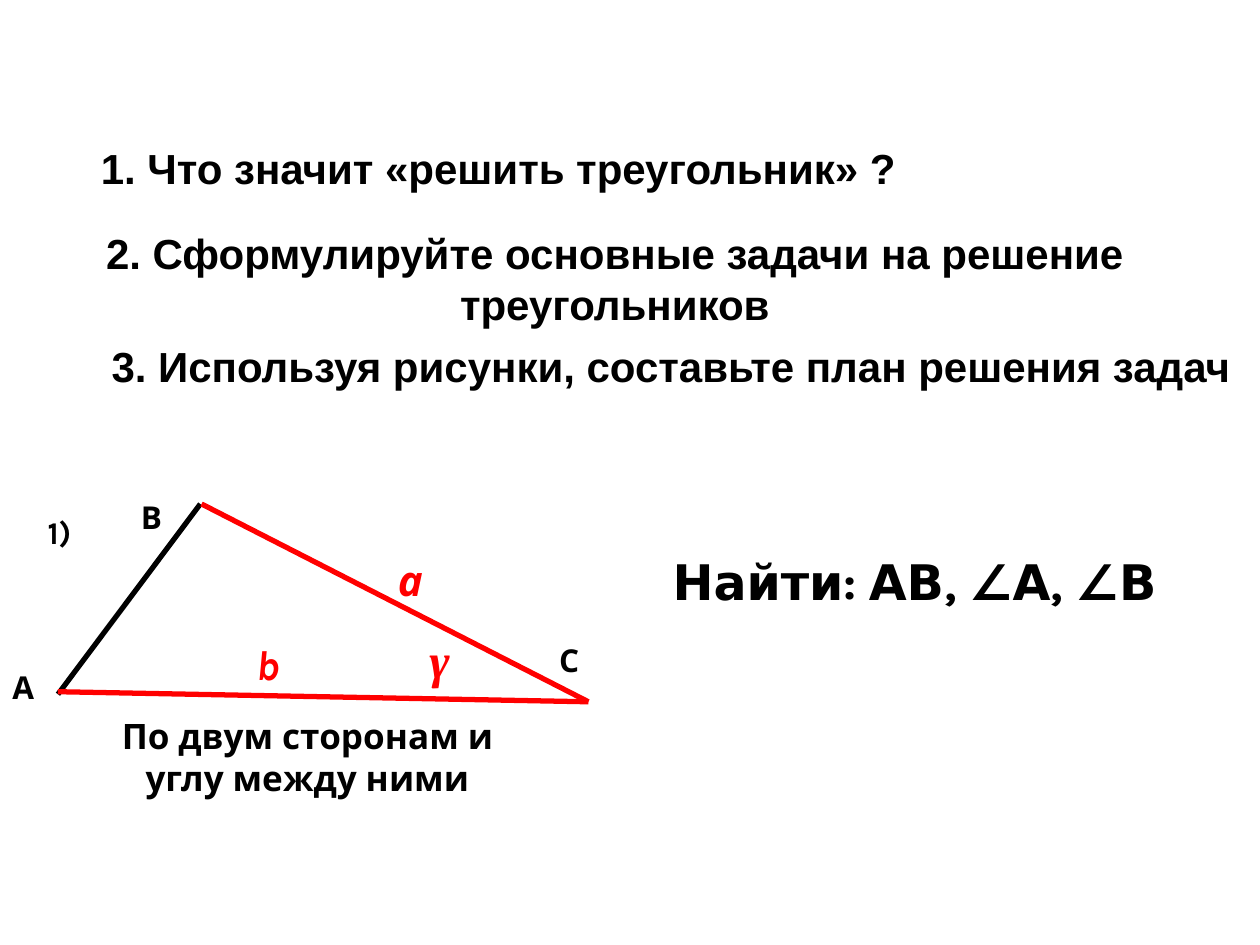
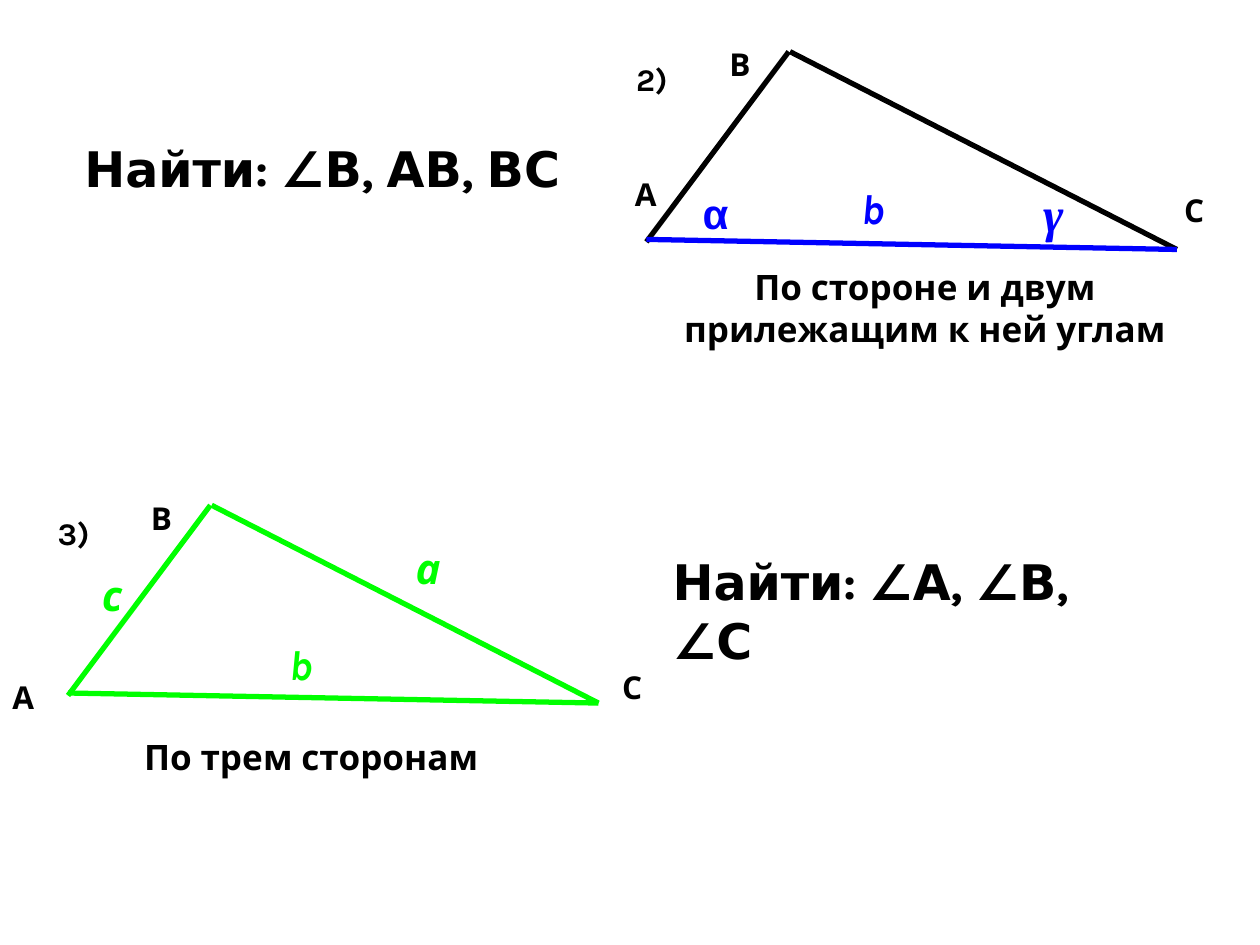
import pptx
import pptx.util
import pptx.dml.color
import pptx.enum.shapes
import pptx.enum.text
import pptx.oxml.ns
import lxml.etree

Align = pptx.enum.text.PP_ALIGN


class Theme:
    """Colours, type sizes and text formats."""
    black, red, blue, green = "000000", "FF0000", "0000FF", "00FF00"
    line = 3
    ask = {"name": "Arial", "size": 24, "bold": True}
    goal = {"name": "Karla", "size": 28, "bold": True}
    note = {"name": "Karla", "size": 20, "bold": True}
    mark = {"name": "Karla", "size": 18, "bold": True}
    side = {"name": "Karla", "size": 24, "bold": True, "italic": True}
    alpha = {"name": "Courier New", "size": 24, "bold": True}
    gamma = {"name": "Times New Roman", "size": 28, "bold": True, "italic": True}


class Deck:
    """Places elements on a grid of 100 columns by 75 rows."""

    def __init__(self, theme):
        self.theme = theme
        self.file = pptx.Presentation()
        self.file.slide_width = pptx.util.Inches(10)
        self.file.slide_height = pptx.util.Inches(7.5)
        self.unit = self.file.slide_width / 100
        self.slide = None

    def grid(self, *cells):
        return [round(cell * self.unit) for cell in cells]

    def page(self):
        title_only = self.file.slide_layouts[5]
        self.slide = self.file.slides.add_slide(title_only)

    def fill(self, shape, text, style, colour, centred):
        frame = shape.text_frame
        frame.word_wrap = True
        frame.auto_size = pptx.enum.text.MSO_AUTO_SIZE.NONE
        frame.vertical_anchor = pptx.enum.text.MSO_ANCHOR.TOP
        frame.text = text
        para = frame.paragraphs[0]
        para.alignment = Align.CENTER if centred else Align.LEFT
        para.space_before = pptx.util.Pt(0)
        font = para.runs[0].font
        for key, value in style.items():
            setattr(font, key, pptx.util.Pt(value) if key == "size" else value)
        font.color.rgb = pptx.dml.color.RGBColor.from_string(colour)

    def title(self, text, box, style, centred=False):
        shape = self.slide.shapes.title
        names = ("left", "top", "width", "height")
        for key, value in zip(names, self.grid(*box)):
            setattr(shape, key, value)
        self.fill(shape, text, style, self.theme.black, centred)

    def text(self, text, box, style, colour=Theme.black, centred=False):
        shape = self.slide.shapes.add_textbox(*self.grid(*box))
        self.fill(shape, text, style, colour, centred)

    def line(self, start, end, colour):
        kind = pptx.enum.shapes.MSO_CONNECTOR.STRAIGHT
        line = self.slide.shapes.add_connector(kind, *self.grid(*start, *end))
        line.line.width = pptx.util.Pt(self.theme.line)
        line.line.color.rgb = pptx.dml.color.RGBColor.from_string(colour)
        props = line.element.spPr
        lxml.etree.SubElement(props, pptx.oxml.ns.qn("a:effectLst"))

    def figure(self, number, left, top, colours, corners, labels, note, box):
        """Triangle ABC; corners, labels and note are set from its top left."""
        def move(x, y, *size):
            return (left + x, top + y, *size)

        # Sides AB, BC and AC
        ends = [((11.3, 0), (0, 15.1)), ((11.4, 0), (42.1, 15.7)),
                ((0, 14.9), (42.1, 15.7))]
        for (start, end), colour in zip(ends, colours):
            self.line(move(*start), move(*end), colour)

        # Number and corner names
        self.text(number, move(-1.8, 0.2, 5.7, 4), self.theme.mark)
        for name, spot in zip("ВАС", [(5.6, -1), *corners]):
            self.text(name, move(*spot, 4, 4), self.theme.mark)

        # Given sides and angles, in the colour of the base
        for name, x, y, style in labels:
            self.text(name, move(x, y, 4, 5), style, colours[-1])

        self.text(note, move(*box), self.theme.note, centred=True)


def main():
    look = Theme()
    deck = Deck(look)

    # Slide 1: questions and the first task
    deck.page()
    deck.title("1. Что значит «решить треугольник» ?",
               (0, 10.8, 79.1, 5), look.ask, centred=True)
    deck.text("2. Сформулируйте основные задачи на решение треугольников",
              (0, 17.6, 97.6, 9), look.ask, centred=True)
    deck.text("3. Используя рисунки, составьте план решения задач",
              (6.5, 26.5, 93.5, 5), look.ask, centred=True)
    deck.figure("1)", 4.6, 40, (look.black, look.red, look.red),
                [(-4.6, 12.5), (38.8, 10.4)],
                [("b", 14.8, 10.2, look.side), ("а", 26, 3.5, look.side),
                 ("γ", 28.5, 9.5, look.gamma)],
                "По двум сторонам и углу между ними", (1.3, 16.2, 37, 7.7))
    deck.text("Найти: АВ, ∠А, ∠В", (52.4, 43.3, 40.9, 5.7), look.goal)

    # Slide 2: the second and third tasks
    deck.page()
    deck.title("Найти: ∠В, АВ, ВС", (5.7, 10.5, 40.9, 5.7), look.goal)
    deck.figure("2)", 51.3, 4.1, (look.black, look.black, look.blue),
                [(-1.9, 9.3), (41.7, 10.6)],
                [("b", 16.1, 9.9, look.side), ("α", 3.5, 10.3, look.alpha),
                 ("γ", 30.5, 10, look.gamma)],
                "По стороне и двум прилежащим к ней углам",
                (-1.5, 16.5, 47.2, 7.7))
    deck.figure("3)", 5.4, 40.1, [look.green] * 3,
                [(-5.4, 13.2), (43, 12.4)],
                [("с", 1.7, 4.6, look.side), ("b", 16.6, 10.1, look.side),
                 ("а", 26.6, 2.5, look.side)],
                "По трем сторонам", (-4.3, 17.8, 47.2, 4.3))
    deck.text("Найти: ∠А, ∠В, ∠С", (52.4, 43.3, 38, 10.5), look.goal)

    deck.file.save("out.pptx")


if __name__ == "__main__":
    main()
